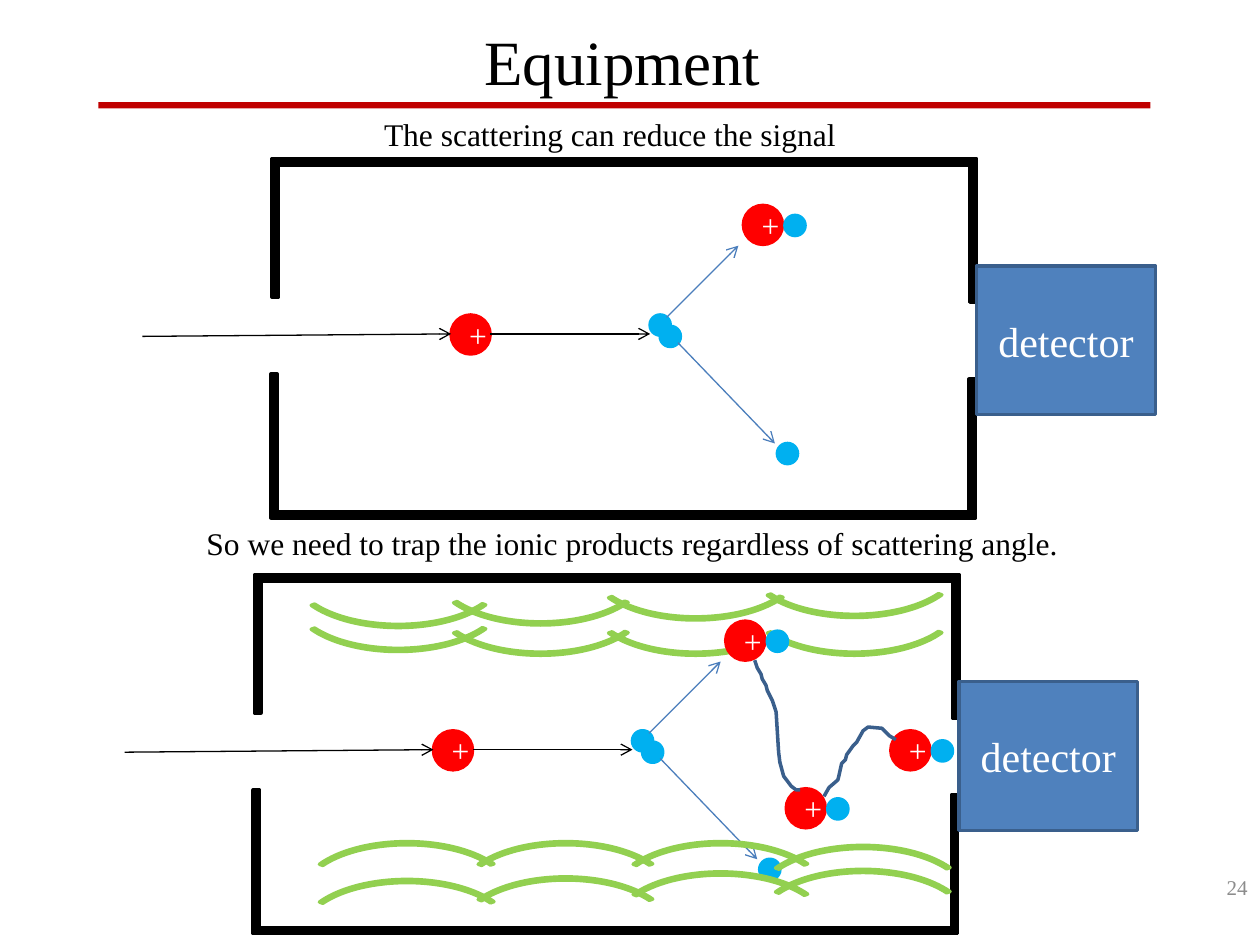
from dataclasses import dataclass
from lxml.etree import SubElement
from pptx import Presentation
from pptx.dml.color import RGBColor
from pptx.enum.shapes import MSO_CONNECTOR, MSO_SHAPE
from pptx.enum.text import MSO_ANCHOR, PP_ALIGN
from pptx.oxml.ns import qn
from pptx.util import Inches, Pt


@dataclass(frozen=True)
class Theme:
    font: str = "Times New Roman"
    head: int = 36
    label: int = 24
    body: int = 18
    small: int = 12
    black: str = "000000"
    white: str = "FFFFFF"
    gray: str = "8C8C8C"
    rule: str = "C00000"
    ion: str = "FF0000"
    atom: str = "00B0F0"
    box: str = "4F81BD"
    edge: str = "3A5F8C"
    track: str = "4B7EBC"
    field: str = "92D050"


THEME = Theme()
ION, ATOM, BAR = 0.31, 0.16, 0.05
ARC_W, ARC_H = 1.68, 0.82
ARC_BEND = (119.02, 204.77, 0.03)
SHIFT = (-0.14, 3.3)
COILS = [
    (5.94, (4.38, 4.08)),
    (4.68, (4.38, 4.1)),
    (3.45, (4.14, 4.38)),
    (2.32, (4.16, 4.35)),
]
FALL = [
    (5.99, 5.24), (6.01, 5.3), (6.04, 5.35), (6.05, 5.39), (6.08, 5.44),
    (6.09, 5.48), (6.11, 5.52), (6.13, 5.56), (6.16, 5.65), (6.18, 5.97),
    (6.19, 6.05), (6.22, 6.16), (6.28, 6.24), (6.32, 6.27), (6.35, 6.27),
]
RISE = [
    (6.54, 6.32), (6.58, 6.25), (6.65, 6.19), (6.66, 6.15), (6.68, 6.06),
    (6.71, 6.03), (6.72, 5.99), (6.77, 5.92), (6.8, 5.89), (6.85, 5.8),
    (6.89, 5.77), (7, 5.78), (7.03, 5.81), (7.06, 5.84), (7.11, 5.87),
]


def rgb(code):
    return RGBColor.from_string(code)


def write(frame, text, size, color, align=PP_ALIGN.LEFT):
    frame.text = text
    para = frame.paragraphs[0]
    para.alignment = align
    para.font.name = THEME.font
    para.font.size = Pt(size)
    para.font.color.rgb = rgb(color)


def add_text(slide, area, text, size, color, align=PP_ALIGN.LEFT):
    frame = slide.shapes.add_textbox(*map(Inches, area)).text_frame
    frame.word_wrap = True
    frame.vertical_anchor = MSO_ANCHOR.MIDDLE
    write(frame, text, size, color, align)


def add_title(slide, text):
    title = slide.shapes.title
    title.left, title.top, title.width, title.height = map(
        Inches, (3.73, 0.12, 2.42, 0.71))
    title.text_frame.word_wrap = False
    title.text_frame.vertical_anchor = MSO_ANCHOR.MIDDLE
    write(title.text_frame, text, THEME.head, THEME.black, PP_ALIGN.CENTER)


def add_form(slide, kind, area, fill, line=None):
    form = slide.shapes.add_shape(kind, *map(Inches, area))
    form.shadow.inherit = False
    form.fill.solid()
    form.fill.fore_color.rgb = rgb(fill)
    form.line.color.rgb = rgb(line or fill)
    form.line.width = Pt(2)
    return form


def add_label(form, text, size):
    form.text_frame.vertical_anchor = MSO_ANCHOR.MIDDLE
    write(form.text_frame, text, size, THEME.white, PP_ALIGN.CENTER)


def add_ion(slide, x, y):
    ion = add_form(slide, MSO_SHAPE.OVAL, (x, y, ION, ION), THEME.ion)
    add_label(ion, "+", THEME.body)


def add_atom(slide, x, y):
    add_form(slide, MSO_SHAPE.OVAL, (x, y, ATOM, ATOM), THEME.atom)


def add_pair(slide, x, y):
    add_ion(slide, x, y)
    add_atom(slide, x + 0.33, y + 0.08)


def add_arrow(slide, start, end, color):
    arrow = slide.shapes.add_connector(
        MSO_CONNECTOR.STRAIGHT, *map(Inches, (*start, *end)))
    arrow.line.color.rgb = rgb(color)
    arrow.line.width = Pt(0.75)
    SubElement(arrow.line._get_or_add_ln(), qn("a:tailEnd"), type="arrow")
    SubElement(arrow._element.spPr, qn("a:effectLst"))


def add_coil(slide, x, y, turn):
    area = (x, y, ARC_W, ARC_H)
    coil = add_form(slide, MSO_SHAPE.BLOCK_ARC, area, THEME.field)
    coil.rotation = turn
    for spot, value in enumerate(ARC_BEND):
        coil.adjustments[spot] = value


def add_coils(slide, below):
    for x, tops in COILS:
        for y in tops:
            if below:
                add_coil(slide, 8.33 - x, 11.06 - y, 0)
            else:
                add_coil(slide, x, y, 180)


def add_trail(slide, points):
    spots = [(Inches(x), Inches(y)) for x, y in points]
    maker = slide.shapes.build_freeform(*spots[0])
    maker.add_line_segments(spots[1:], close=False)
    trail = maker.convert_to_shape()
    trail.shadow.inherit = False
    trail.fill.background()
    trail.line.color.rgb = rgb(THEME.edge)
    trail.line.width = Pt(2)


def add_chamber(slide, dx=0, dy=0):
    def at(x, y):
        return x + dx, y + dy

    add_ion(slide, *at(3.58, 2.5))
    for spot in ((5.16, 2.5), (5.24, 2.59), (6.17, 3.52)):
        add_atom(slide, *at(*spot))
    add_pair(slide, *at(5.9, 1.63))
    for start, end, color in (
        ((1.13, 2.67), (3.58, 2.65), THEME.black),
        ((3.89, 2.65), (5.16, 2.65), THEME.black),
        ((5.29, 2.52), (5.86, 1.95), THEME.track),
        ((5.38, 2.72), (6.15, 3.52), THEME.track),
    ):
        add_arrow(slide, at(*start), at(*end), color)
    for x, y, wide, high in (
        (2.16, 1.26, 5.59, BAR),
        (2.16, 1.26, BAR, 1.1),
        (7.7, 1.3, BAR, 1.1),
        (2.15, 4.06, 5.59, BAR),
        (7.69, 3.01, BAR, 1.1),
        (2.15, 2.97, BAR, 1.1),
    ):
        add_form(slide, MSO_SHAPE.RECTANGLE, (*at(x, y), wide, high), THEME.black)
    area = (*at(7.75, 2.11), 1.42, 1.18)
    box = add_form(slide, MSO_SHAPE.RECTANGLE, area, THEME.box, THEME.edge)
    add_label(box, "detector", THEME.label)


def main():
    deck = Presentation()
    deck.slide_width, deck.slide_height = Inches(10), Inches(7.5)
    slide = deck.slides.add_slide(deck.slide_layouts[5])
    add_title(slide, "Equipment")
    rule = add_form(slide, MSO_SHAPE.RECTANGLE, (0.78, 0.81, 8.35, 0.05), THEME.rule)
    rule.line.fill.background()
    add_text(slide, (2.95, 0.86, 3.83, 0.4),
             "The scattering can reduce the signal", THEME.body, THEME.black)
    add_text(slide, (1.54, 4.11, 7.11, 0.4),
             "So we need to trap the ionic products regardless of scattering angle.",
             THEME.body, THEME.black)
    add_chamber(slide)
    add_coils(slide, below=False)
    add_chamber(slide, *SHIFT)
    add_coils(slide, below=True)
    for spot in ((6.24, 6.26), (7.07, 5.8)):
        add_pair(slide, *spot)
    for points in (FALL, RISE):
        add_trail(slide, points)
    add_text(slide, (7.67, 6.84, 2.33, 0.4), "24", THEME.small, THEME.gray,
             PP_ALIGN.RIGHT)
    deck.save("out.pptx")


if __name__ == "__main__":
    main()
